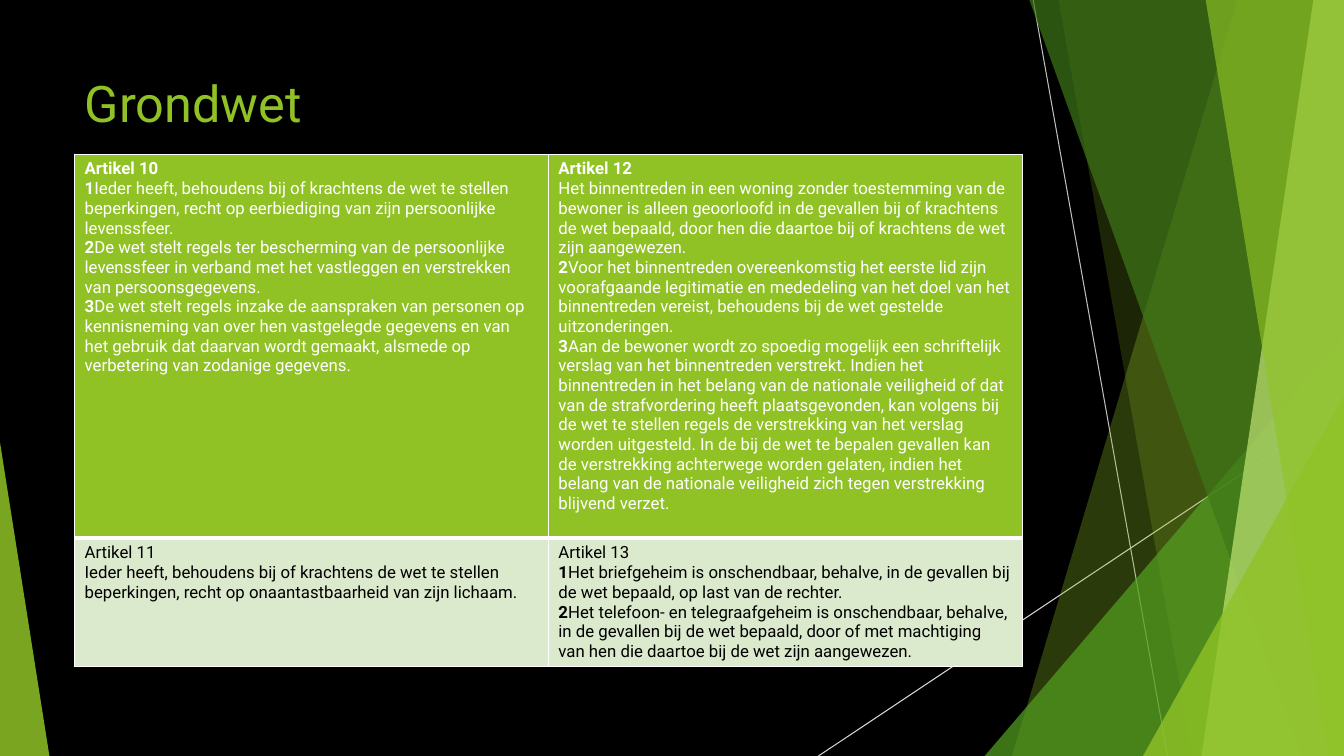
from lxml import etree
from pptx import Presentation
from pptx.dml.color import RGBColor
from pptx.enum.shapes import MSO_CONNECTOR, MSO_SHAPE
from pptx.enum.text import MSO_ANCHOR, MSO_AUTO_SIZE, PP_ALIGN
from pptx.oxml.ns import qn
from pptx.util import Pt

STRAIGHT = MSO_CONNECTOR.STRAIGHT
TRIANGLE = MSO_SHAPE.ISOSCELES_TRIANGLE
FONT = "Roboto"
GREEN, WHITE, BLACK = "90C226", "FFFFFF", "000000"
WIDTH, HEIGHT = 960, 540

TITLE = "Grondwet"

# Each paragraph is a bold part followed by a regular part
ARTICLES = [
    [
        [
            ("Artikel 10\v1", "Ieder heeft, behoudens bij of krachtens de wet te stellen beperkingen, "
             "recht op eerbiediging van zijn persoonlijke levenssfeer."),
            ("2", "De wet stelt regels ter bescherming van de persoonlijke levenssfeer in verband "
             "met het vastleggen en verstrekken van persoonsgegevens."),
            ("3", "De wet stelt regels inzake de aanspraken van personen op kennisneming van over "
             "hen vastgelegde gegevens en van het gebruik dat daarvan wordt gemaakt, alsmede op "
             "verbetering van zodanige gegevens."),
        ],
        [
            ("Artikel 12", ""),
            ("", "Het binnentreden in een woning zonder toestemming van de bewoner is alleen "
             "geoorloofd in de gevallen bij of krachtens de wet bepaald, door hen die daartoe bij "
             "of krachtens de wet zijn aangewezen."),
            ("2", "Voor het binnentreden overeenkomstig het eerste lid zijn voorafgaande legitimatie "
             "en mededeling van het doel van het binnentreden vereist, behoudens bij de wet "
             "gestelde uitzonderingen."),
            ("3", "Aan de bewoner wordt zo spoedig mogelijk een schriftelijk verslag van het "
             "binnentreden verstrekt. Indien het binnentreden in het belang van de nationale "
             "veiligheid of dat van de strafvordering heeft plaatsgevonden, kan volgens bij de wet "
             "te stellen regels de verstrekking van het verslag worden uitgesteld. In de bij de wet "
             "te bepalen gevallen kan de verstrekking achterwege worden gelaten, indien het belang "
             "van de nationale veiligheid zich tegen verstrekking blijvend verzet."),
        ],
    ],
    [
        [
            ("", "Artikel 11"),
            ("", "Ieder heeft, behoudens bij of krachtens de wet te stellen beperkingen, recht op "
             "onaantastbaarheid van zijn lichaam."),
        ],
        [
            ("", "Artikel 13"),
            ("1", "Het briefgeheim is onschendbaar, behalve, in de gevallen bij de wet bepaald, op "
             "last van de rechter."),
            ("2", "Het telefoon- en telegraafgeheim is onschendbaar, behalve, in de gevallen bij de "
             "wet bepaald, door of met machtiging van hen die daartoe bij de wet zijn aangewezen."),
        ],
    ],
]
# Height, fill, text colour, border widths
ROWS = [
    (274.3, GREEN, WHITE, {"L": 1, "R": 1, "T": 1, "B": 3}),
    (91.8, "DBE9CD", BLACK, {"L": 1, "R": 1, "T": 3, "B": 1}),
]
TABLE_LEFT, TABLE_TOP, COLUMN_WIDTH = 53.3, 110.2, 338.4

# Start x, start y, end x, end y, colour
THIN_LINES = [
    (738, 0, 834, 540, "BFBFBF"),
    (960, 290, 584.6, 540, "D9D9D9"),
]
# Back to front. Band: top x, bottom x. Triangle: left, top, width, apex position.
FACETS = [
    ("band", (884.2, 722.9), GREEN, 30),
    ("band", (756, 851.8), GREEN, 20),
    ("triangle", (703.4, 239.8, 256.6, 1), "54A021", 72),
    ("band", (735.1, 929.5), "3F7819", 70),
    ("band", (938.2, 858.2), "C0E474", 70),
    ("band", (861.1, 949), GREEN, 65),
    ("triangle", (816.5, 283, 143.5, 1), GREEN, 80),
    ("triangle", (0, 316, 35.3, 0), GREEN, 85),
]


def rgb(value):
    return RGBColor.from_string(value)


def add_thin_line(slide, start_x, start_y, end_x, end_y, color):
    line = slide.shapes.add_connector(STRAIGHT, Pt(start_x), Pt(start_y), Pt(end_x), Pt(end_y))
    line.line.color.rgb = rgb(color)
    line.line.width = Pt(0.75)
    etree.SubElement(line._element.spPr, qn("a:effectLst"))


def add_facet(slide, kind, geometry, color, opacity):
    """Add a translucent band reaching the right edge, or a right-angled triangle on the bottom edge."""
    if kind == "band":
        top_x, bottom_x = geometry
        builder = slide.shapes.build_freeform(Pt(top_x), Pt(-0.6))
        corners = [(WIDTH, -0.6), (WIDTH, HEIGHT), (bottom_x, HEIGHT)]
        builder.add_line_segments([(Pt(x), Pt(y)) for x, y in corners], close=True)
        shape = builder.convert_to_shape()
    else:
        left, top, width, apex = geometry
        shape = slide.shapes.add_shape(TRIANGLE, Pt(left), Pt(top), Pt(width), Pt(HEIGHT - top))
        shape.adjustments[0] = apex
    shape.shadow.inherit = False
    shape.line.fill.background()
    shape.fill.solid()
    shape.fill.fore_color.rgb = rgb(color)
    color_element = shape._element.spPr.find(qn("a:solidFill"))[0]
    etree.SubElement(color_element, qn("a:alpha"), val=str(opacity * 1000))


def format_run(run, size, color, bold=False):
    run.font.name = FONT
    run.font.size = Pt(size)
    run.font.color.rgb = rgb(color)
    run.font.bold = bold


def add_title(slide):
    title = slide.shapes.title
    slide.shapes._spTree.append(title._element)  # in front of the facets
    title.left, title.top, title.width, title.height = Pt(53.3), Pt(48), Pt(676.8), Pt(103.7)
    frame = title.text_frame
    frame.text = TITLE
    frame.auto_size = MSO_AUTO_SIZE.NONE
    frame.vertical_anchor = MSO_ANCHOR.TOP
    frame.paragraphs[0].alignment = PP_ALIGN.LEFT
    format_run(frame.paragraphs[0].runs[0], 36, GREEN)


def set_borders(cell, widths):
    properties = cell._tc.get_or_add_tcPr()
    for position, (side, width) in enumerate(widths.items()):
        border = etree.Element(qn(f"a:ln{side}"), w=str(Pt(width)))
        fill = etree.SubElement(border, qn("a:solidFill"))
        etree.SubElement(fill, qn("a:srgbClr"), val=WHITE)
        properties.insert(position, border)


def fill_cell(cell, paragraphs, fill, color, borders):
    cell.fill.solid()
    cell.fill.fore_color.rgb = rgb(fill)
    set_borders(cell, borders)
    frame = cell.text_frame
    for index, (bold_text, regular_text) in enumerate(paragraphs):
        paragraph = frame.add_paragraph() if index else frame.paragraphs[0]
        paragraph.text = bold_text
        for run in paragraph.runs:
            format_run(run, 12, color, bold=True)
        if regular_text:
            run = paragraph.add_run()
            run.text = regular_text
            format_run(run, 12, color)


def add_articles(slide):
    table_height = sum(row[0] for row in ROWS)
    table = slide.shapes.add_table(
        2, 2, Pt(TABLE_LEFT), Pt(TABLE_TOP), Pt(2 * COLUMN_WIDTH), Pt(table_height)).table
    table.first_row = table.horz_banding = False
    for row_index, (height, fill, color, borders) in enumerate(ROWS):
        table.rows[row_index].height = Pt(height)
        for column_index, paragraphs in enumerate(ARTICLES[row_index]):
            fill_cell(table.cell(row_index, column_index), paragraphs, fill, color, borders)


def main():
    presentation = Presentation()
    presentation.slide_width, presentation.slide_height = Pt(WIDTH), Pt(HEIGHT)
    slide = presentation.slides.add_slide(presentation.slide_layouts[5])
    slide.background.fill.solid()
    slide.background.fill.fore_color.rgb = rgb(BLACK)
    for line in THIN_LINES:
        add_thin_line(slide, *line)
    for facet in FACETS:
        add_facet(slide, *facet)
    add_title(slide)
    add_articles(slide)
    presentation.save("out.pptx")


if __name__ == "__main__":
    main()
